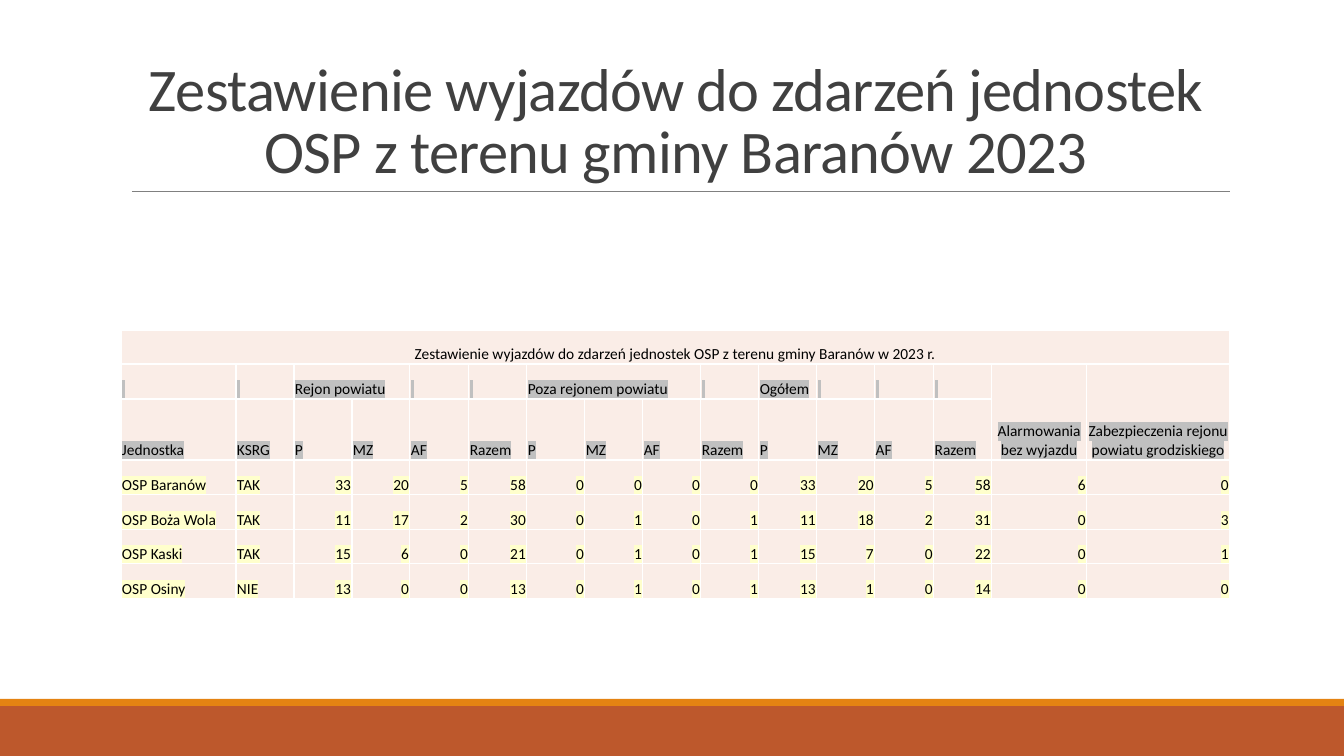
from dataclasses import dataclass
from typing import Optional

from lxml import etree
from pptx import Presentation
from pptx import util as u
from pptx.dml.color import RGBColor
from pptx.enum import shapes, text
from pptx.oxml import ns

SCALE = 914400 / 100.8
FONT = "Calibri"
RUST = RGBColor(0xBD, 0x58, 0x2C)
AMBER = RGBColor(0xE4, 0x83, 0x12)
GREY = RGBColor(0x80, 0x80, 0x80)
DARK = RGBColor(0x40, 0x40, 0x40)
BLACK = RGBColor(0, 0, 0)
WHITE = RGBColor(0xFF, 0xFF, 0xFF)
PINK = RGBColor(0xFA, 0xED, 0xE7)
SILVER = RGBColor(0xC0, 0xC0, 0xC0)
CREAM = RGBColor(0xFF, 0xFF, 0xCC)

LEFT, CENTER, RIGHT = text.PP_ALIGN.LEFT, text.PP_ALIGN.CENTER, text.PP_ALIGN.RIGHT
BLANK = " "


@dataclass
class Bar:
    top: int
    height: int
    color: RGBColor


@dataclass
class Entry:
    row: int
    col: int
    words: str
    align: text.PP_ALIGN = LEFT
    mark: Optional[RGBColor] = None
    rows: int = 1
    cols: int = 1


BARS = [Bar(706, 50, RUST), Bar(699, 7, AMBER)]
TITLE = "Zestawienie wyjazdów do zdarzeń jednostek OSP z terenu gminy Baranów 2023"
WIDTHS = [115, 58, 58, 58, 59, 58, 58, 58, 58, 58, 58, 58, 59, 58, 95, 143]
HEIGHTS = [34, 35, 61, 35, 35, 34, 35]
GROUPS = [
    Entry(0, 0, "Zestawienie wyjazdów do zdarzeń jednostek OSP z terenu gminy Baranów w 2023 r.",
          CENTER, cols=16),
    Entry(1, 2, "Rejon powiatu", mark=SILVER, cols=2),
    Entry(1, 6, "Poza rejonem powiatu", mark=SILVER, cols=3),
    Entry(1, 10, "Ogółem", mark=SILVER),
    Entry(1, 14, "Alarmowania bez wyjazdu", CENTER, SILVER, rows=2),
    Entry(1, 15, "Zabezpieczenia rejonu powiatu grodziskiego", CENTER, SILVER, rows=2),
]
GAPS = [Entry(1, col, BLANK, mark=SILVER) for col in (0, 1, 4, 5, 9, 11, 12, 13)]
HEADS = ["Jednostka", "KSRG"] + ["P", "MZ", "AF", "Razem"] * 3
UNITS = [
    ("OSP Baranów", "TAK", 33, 20, 5, 58, 0, 0, 0, 0, 33, 20, 5, 58, 6, 0),
    ("OSP Boża Wola", "TAK", 11, 17, 2, 30, 0, 1, 0, 1, 11, 18, 2, 31, 0, 3),
    ("OSP Kaski", "TAK", 15, 6, 0, 21, 0, 1, 0, 1, 15, 7, 0, 22, 0, 1),
    ("OSP Osiny", "NIE", 13, 0, 0, 13, 0, 1, 0, 1, 13, 1, 0, 14, 0, 0),
]


def px(count: int) -> u.Emu:
    return u.Emu(round(count * SCALE))


def tint(parent, tag: str, color: RGBColor) -> None:
    holder = etree.SubElement(parent, ns.qn(tag))
    etree.SubElement(holder, ns.qn("a:srgbClr"), val=str(color))


def write(para, words: str, size: float, color: RGBColor, align: text.PP_ALIGN):
    run = para.add_run()
    run.text = words
    para.alignment = align
    para.font.name = FONT
    para.font.size = u.Pt(size)
    para.font.color.rgb = color
    return run


def add_bar(slide, bar: Bar) -> None:
    shape = slide.shapes.add_shape(
        shapes.MSO_SHAPE.RECTANGLE, 0, px(bar.top), px(1344), px(bar.height))
    shape.shadow.inherit = False
    shape.fill.solid()
    shape.fill.fore_color.rgb = bar.color
    shape.line.fill.background()


def add_rule(slide) -> None:
    rule = slide.shapes.add_connector(
        shapes.MSO_CONNECTOR.STRAIGHT, px(132), px(191), px(1230), px(191))
    rule.line.color.rgb = GREY
    rule.line.width = u.Pt(0.5)
    etree.SubElement(rule.element.spPr, ns.qn("a:effectLst"))


def add_title(slide) -> None:
    frame = slide.shapes.add_textbox(px(121), px(31), px(1109), px(160)).text_frame
    frame.word_wrap = True
    frame.vertical_anchor = text.MSO_ANCHOR.BOTTOM
    para = frame.paragraphs[0]
    para.line_spacing = 0.85
    run = write(para, TITLE, 43.2, DARK, CENTER)
    run.font._element.set("spc", "-50")


def style_cell(cell) -> None:
    props = cell._tc.get_or_add_tcPr()
    for side in ("L", "R", "T", "B"):
        line = etree.SubElement(props, ns.qn(f"a:ln{side}"), w=str(u.Pt(1)))
        tint(line, "a:solidFill", WHITE)
    cell.fill.solid()
    cell.fill.fore_color.rgb = PINK
    cell.vertical_anchor = text.MSO_ANCHOR.BOTTOM
    cell.margin_left = cell.margin_right = cell.margin_top = px(1)
    cell.margin_bottom = 0


def fill_cell(table, entry: Entry) -> None:
    cell = table.cell(entry.row, entry.col)
    if entry.rows > 1 or entry.cols > 1:
        cell.merge(table.cell(entry.row + entry.rows - 1, entry.col + entry.cols - 1))
    run = write(cell.text_frame.paragraphs[0], entry.words, 11, BLACK, entry.align)
    if entry.mark is not None:
        tint(run.font._element, "a:highlight", entry.mark)


def add_grid(slide) -> None:
    table = slide.shapes.add_table(
        len(HEIGHTS), len(WIDTHS), px(121), px(330), px(sum(WIDTHS)), px(sum(HEIGHTS))).table
    table.first_row = table.horz_banding = False
    for col, width in zip(table.columns, WIDTHS):
        col.width = px(width)
    for row, height in zip(table.rows, HEIGHTS):
        row.height = px(height)
    for cell in table.iter_cells():
        style_cell(cell)
    heads = [Entry(2, col, head, mark=SILVER) for col, head in enumerate(HEADS)]
    units = [
        Entry(row, col, str(value), RIGHT if col > 1 else LEFT, CREAM)
        for row, unit in enumerate(UNITS, 3)
        for col, value in enumerate(unit)
    ]
    for entry in GROUPS + GAPS + heads + units:
        fill_cell(table, entry)


def main() -> None:
    deck = Presentation()
    deck.slide_width, deck.slide_height = px(1344), px(756)
    slide = deck.slides.add_slide(deck.slide_layouts[6])
    for bar in BARS:
        add_bar(slide, bar)
    add_rule(slide)
    add_title(slide)
    add_grid(slide)
    deck.save("out.pptx")


if __name__ == "__main__":
    main()
